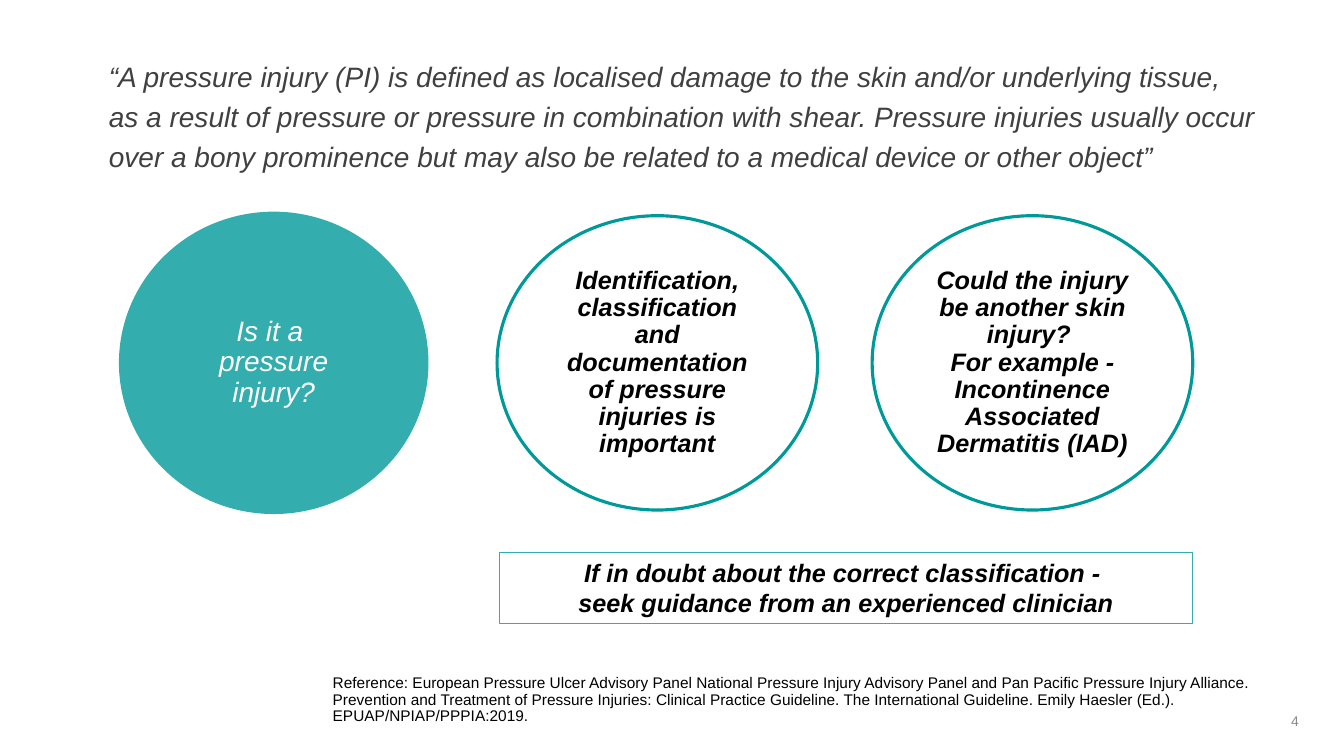
import pptx
import pptx.util
import pptx.dml.color
import pptx.enum.shapes
import pptx.enum.text

Inches = pptx.util.Inches
Pt = pptx.util.Pt
ALIGN = pptx.enum.text.PP_ALIGN
ANCHOR = pptx.enum.text.MSO_ANCHOR
SHAPE = pptx.enum.shapes.MSO_SHAPE

COLORS = {
    "white": "FFFFFF",
    "black": "000000",
    "quote": "404040",
    "number": "898989",
    "teal": "33ADAD",
    "outline": "009999",
}


def rgb(name):
    return pptx.dml.color.RGBColor.from_string(COLORS[name])


def write(shape, paragraphs, size, color, align=ALIGN.LEFT, anchor=ANCHOR.TOP,
          spacing=1.0, bold=False, italic=False, inset=None):
    frame = shape.text_frame
    frame.word_wrap = True
    frame.vertical_anchor = anchor
    if inset is not None:
        frame.margin_left = frame.margin_right = Inches(inset)
        frame.margin_top = frame.margin_bottom = Inches(inset)
    for index, text in enumerate(paragraphs):
        paragraph = frame.add_paragraph() if index else frame.paragraphs[0]
        paragraph.alignment = align
        paragraph.line_spacing = spacing
        for part, line in enumerate(text.split("\n")):
            if part:
                paragraph.add_line_break()
            run = paragraph.add_run()
            run.text = line
            run.font.name = "Arial"
            run.font.size = Pt(size)
            run.font.bold = bold
            run.font.italic = italic
            run.font.color.rgb = rgb(color)


deck = pptx.Presentation()
deck.slide_width = Inches(13.33)
deck.slide_height = Inches(7.5)
slide = deck.slides.add_slide(deck.slide_layouts[6])

# Definition
definition = slide.shapes.add_textbox(Inches(1.08), Inches(0.52), Inches(11.54), Inches(1.61))
write(definition, [
    "“A pressure injury (PI) is defined as localised damage to the skin and/or underlying tissue, \n"
    "as a result of pressure or pressure in combination with shear. Pressure injuries usually occur "
    "over a bony prominence but may also be related to a medical device or other object”",
], 20, "quote", spacing=1.2, italic=True, inset=0)

# Question circles: left, top, width, height, fill, outline, size, text color, bold, text
circles = [
    (1.18, 2.1, 3.07, 3, "teal", None, 20, "white", False,
     ["Is it a ", "pressure injury?"]),
    (4.93, 2.14, 3.18, 2.92, "white", "outline", 18, "black", True,
     ["Identification, classification and documentation of pressure injuries is important"]),
    (8.65, 2.14, 3.18, 2.92, "white", "outline", 18, "black", True,
     ["Could the injury be another skin injury? ",
      "For example - Incontinence Associated Dermatitis (IAD)"]),
]
for left, top, width, height, fill, outline, size, color, bold, text in circles:
    circle = slide.shapes.add_shape(SHAPE.OVAL, Inches(left), Inches(top),
                                    Inches(width), Inches(height))
    circle.shadow.inherit = False
    circle.fill.solid()
    circle.fill.fore_color.rgb = rgb(fill)
    if outline:
        circle.line.color.rgb = rgb(outline)
        circle.line.width = Pt(2.25)
    else:
        circle.line.fill.background()
    write(circle, text, size, color, ALIGN.CENTER, ANCHOR.MIDDLE, 0.9, bold, True)

# Advice
advice = slide.shapes.add_shape(SHAPE.RECTANGLE, Inches(4.95), Inches(5.48),
                                Inches(6.88), Inches(0.71))
advice.shadow.inherit = False
advice.fill.background()
advice.line.color.rgb = rgb("teal")
advice.line.width = Pt(0.75)
write(advice, [
    "If in doubt about the correct classification - ",
    "seek guidance from an experienced clinician",
], 18, "black", ALIGN.CENTER, bold=True, italic=True)

# Reference
reference = slide.shapes.add_textbox(Inches(3.3), Inches(6.7), Inches(9.29), Inches(0.58))
write(reference, [
    "Reference: European Pressure Ulcer Advisory Panel National Pressure Injury Advisory Panel "
    "and Pan Pacific Pressure Injury Alliance. Prevention and Treatment of Pressure Injuries: "
    "Clinical Practice Guideline. The International Guideline. Emily Haesler (Ed.). "
    "EPUAP/NPIAP/PPPIA:2019.",
], 11, "black", spacing=0.9, inset=0)

# Slide number
number = slide.shapes.add_textbox(Inches(12.37), Inches(6.95), Inches(0.61), Inches(0.4))
write(number, ["4"], 10, "number", ALIGN.RIGHT, ANCHOR.MIDDLE)

deck.save("out.pptx")
